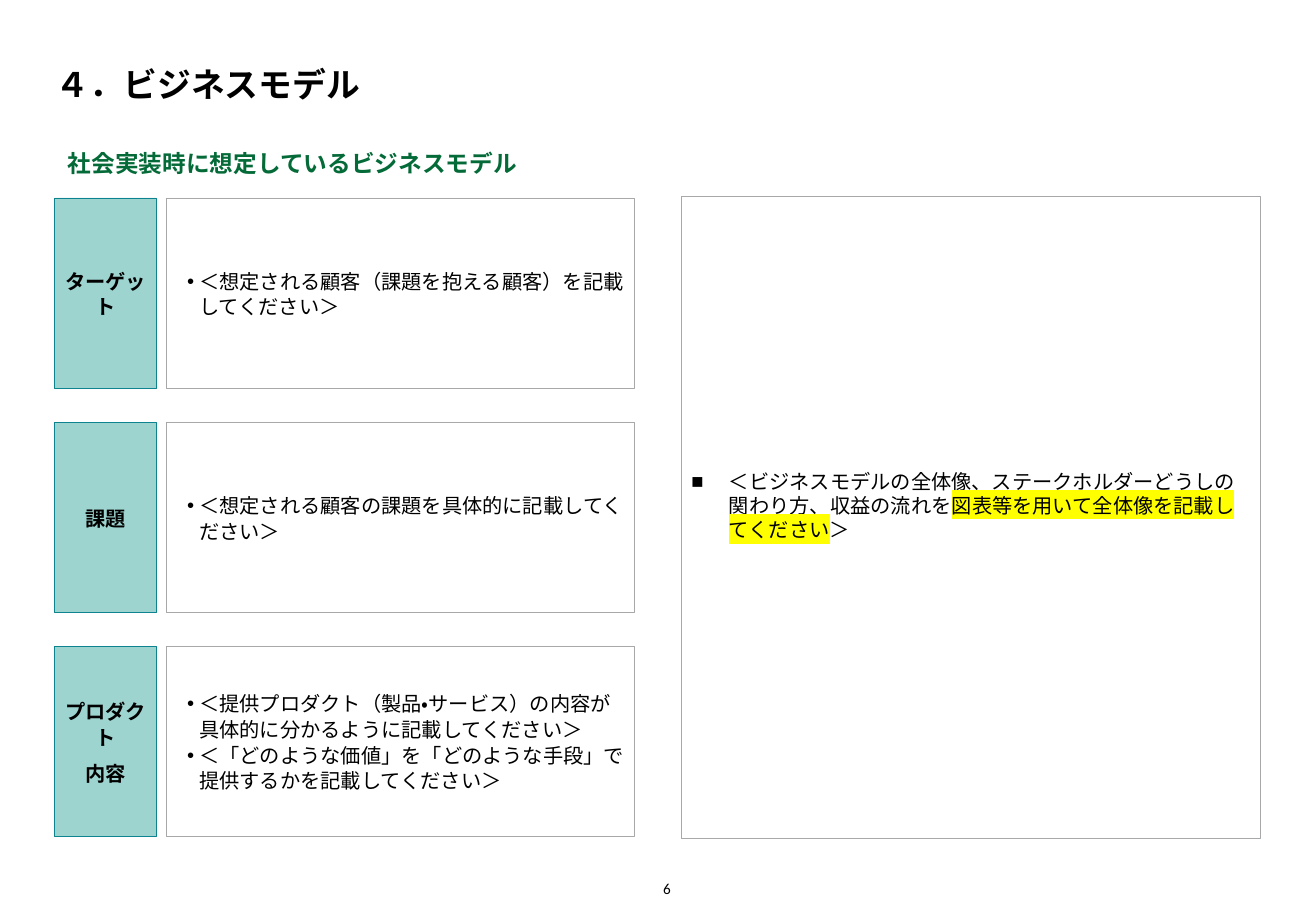
from lxml.etree import SubElement
from pptx import Presentation
from pptx.dml.color import RGBColor
from pptx.enum.lang import MSO_LANGUAGE_ID
from pptx.enum.shapes import MSO_SHAPE
from pptx.enum.text import MSO_ANCHOR, PP_ALIGN
from pptx.oxml import parse_xml
from pptx.oxml.ns import nsdecls, qn
from pptx.util import Inches, Pt

BLACK, WHITE, GREY = "000000", "FFFFFF", "A7A8AA"
MINT, TEAL, GREEN, YELLOW = "9DD4CF", "0D8390", "046A38", "FFFF00"

ROWS = [
    (["ターゲット"],
     ["＜想定される顧客（課題を抱える顧客）を記載してください＞"]),
    (["課題"],
     ["＜想定される顧客の課題を具体的に記載してください＞"]),
    (["プロダクト", "内容"],
     ["＜提供プロダクト（製品・サービス）の内容が具体的に分かるように記載してください＞",
      "＜「どのような価値」を「どのような手段」で提供するかを記載してください＞"]),
]
# Each part of the overview: text, highlight colour
OVERVIEW = [
    ("＜ビジネスモデルの全体像、ステークホルダーどうしの関わり方、収益の流れを", None),
    ("図表等を用いて全体像を記載してください", YELLOW),
    ("＞", None),
]


def color(code):
    return RGBColor.from_string(code)


def add_text(para, text, font="Arial", size=12, fill=BLACK, bold=False, mark=None):
    run = para.add_run()
    run.text = text
    run.font.name = font
    run.font.size = Pt(size)
    run.font.bold = bold
    run.font.color.rgb = color(fill)
    run.font.language_id = MSO_LANGUAGE_ID.JAPANESE
    if mark:
        light = parse_xml(f'<a:highlight {nsdecls("a")}><a:srgbClr val="{mark}"/></a:highlight>')
        run.font._element.find(qn("a:solidFill")).addnext(light)


def add_bullet(para, char, left, hang):
    props = para._p.get_or_add_pPr()
    props.set("marL", str(Inches(left)))
    props.set("indent", str(-Inches(hang)))
    SubElement(props, qn("a:buFont"), typeface="Arial")
    SubElement(props, qn("a:buChar"), char=char)


def set_frame(frame, anchor, side, edge):
    frame.word_wrap = True
    frame.vertical_anchor = anchor
    frame.margin_left = frame.margin_right = Inches(side)
    frame.margin_top = frame.margin_bottom = Inches(edge)


def add_label(slide, area, text, anchor, side=0, edge=0, align=PP_ALIGN.LEFT, **style):
    frame = slide.shapes.add_textbox(*map(Inches, area)).text_frame
    set_frame(frame, anchor, side, edge)
    para = frame.paragraphs[0]
    para.alignment = align
    add_text(para, text, font="Calibri", **style)


def add_panel(slide, area, fill=WHITE, line=GREY):
    box = slide.shapes.add_shape(MSO_SHAPE.RECTANGLE, *map(Inches, area))
    box.shadow.inherit = False
    box.fill.solid()
    box.fill.fore_color.rgb = color(fill)
    box.line.color.rgb = color(line)
    box.line.width = Pt(0.5)
    set_frame(box.text_frame, MSO_ANCHOR.MIDDLE, 0.08, 0.08)
    return box.text_frame


def add_lines(frame, lines, align=PP_ALIGN.LEFT, bullet=None, gap=0, bold=False):
    for i, text in enumerate(lines):
        para = frame.add_paragraph() if i else frame.paragraphs[0]
        para.alignment = align
        para.line_spacing = 1.06
        if i:
            para.space_before = Pt(gap)
        if bullet:
            add_bullet(para, bullet, 0.19, 0.1)
        add_text(para, text, bold=bold)


def add_row(slide, top, heads, notes):
    high = 1.57
    head = add_panel(slide, (0.45, top, 0.84, high), fill=MINT, line=TEAL)
    add_lines(head, heads, align=PP_ALIGN.CENTER, gap=6, bold=True)
    note = add_panel(slide, (1.37, top, 3.85, high))
    add_lines(note, notes, bullet="•")


def add_overview(slide):
    frame = add_panel(slide, (5.61, 1.62, 4.76, 5.28))
    frame.margin_bottom = Inches(0.28)  # text sits slightly above the middle
    para = frame.paragraphs[0]
    para.alignment = PP_ALIGN.LEFT
    add_bullet(para, "■", 0.31, 0.31)
    for text, mark in OVERVIEW:
        add_text(para, text, font="Calibri", mark=mark)


def main():
    deck = Presentation()
    deck.slide_width, deck.slide_height = Inches(10.83), Inches(7.5)
    slide = deck.slides.add_slide(deck.slide_layouts[6])

    # Title and subtitle
    add_label(slide, (0.46, 0.15, 9.92, 0.71), "４．ビジネスモデル",
              MSO_ANCHOR.BOTTOM, size=20, bold=True)
    add_label(slide, (0.46, 1.11, 4.76, 0.47), "社会実装時に想定しているビジネスモデル",
              MSO_ANCHOR.MIDDLE, side=0.1, edge=0.05, size=14, fill=GREEN, bold=True)

    # Rows on the left
    for i, (heads, notes) in enumerate(ROWS):
        add_row(slide, 1.63 + i * 1.845, heads, notes)

    # Overview on the right
    add_overview(slide)

    # Page number
    add_label(slide, (5.32, 7.2, 0.2, 0.19), "6", MSO_ANCHOR.BOTTOM,
              align=PP_ALIGN.RIGHT, size=9)

    deck.save("out.pptx")


if __name__ == "__main__":
    main()
